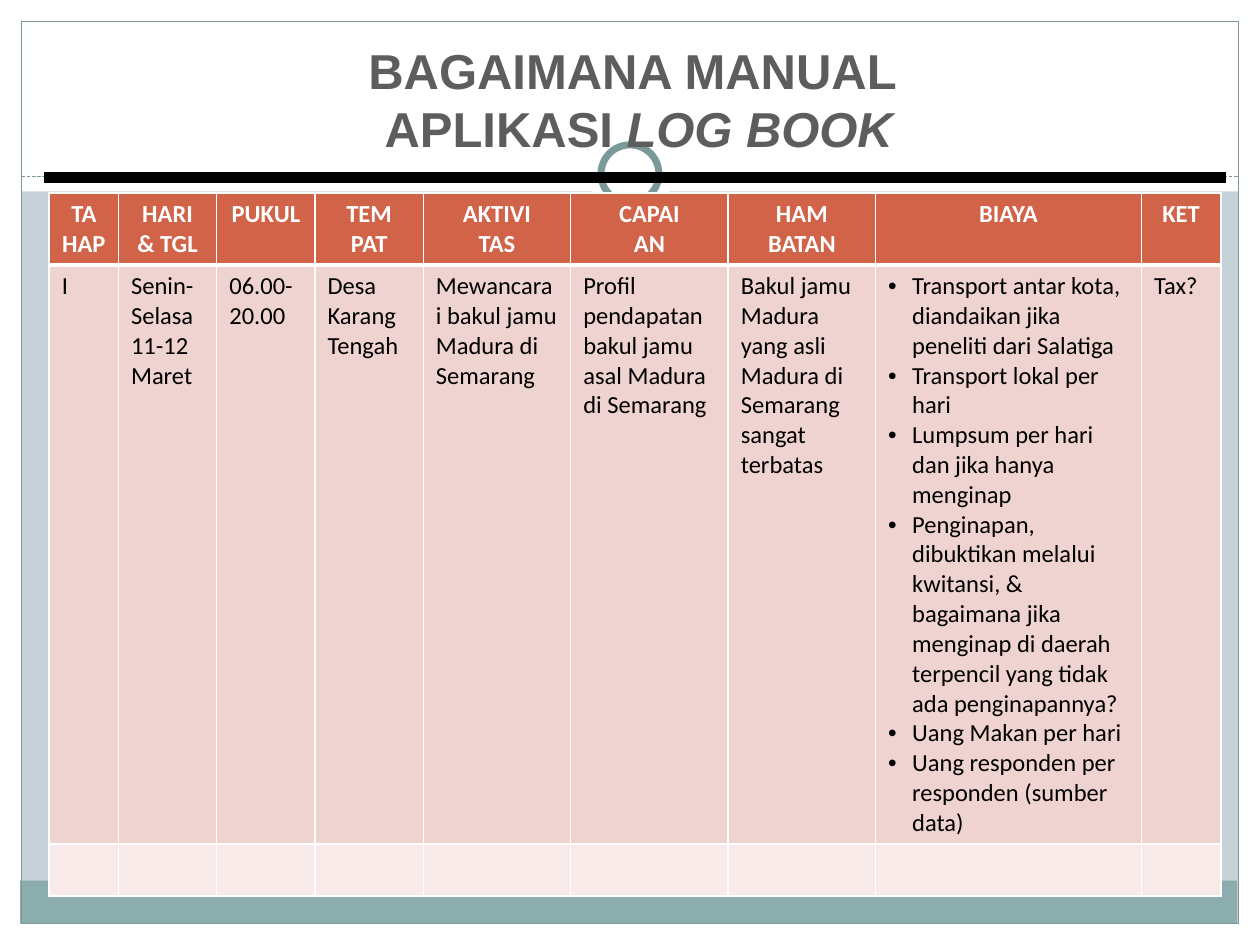
from dataclasses import dataclass

from lxml.etree import SubElement
from pptx import Presentation
from pptx.dml.color import RGBColor
from pptx.enum.dml import MSO_LINE
from pptx.enum.shapes import MSO_CONNECTOR, MSO_SHAPE
from pptx.enum.text import MSO_ANCHOR, MSO_AUTO_SIZE, PP_ALIGN
from pptx.oxml.ns import qn
from pptx.util import Inches, Pt


@dataclass(frozen=True)
class Theme:
    backdrop: str = "C5D1D7"
    white: str = "FFFFFF"
    black: str = "000000"
    footer: str = "8CADAE"
    trim: str = "7C999A"
    title: str = "5D5D5D"
    header: str = "D16349"
    body: str = "EED3D0"
    spare: str = "F7EAE9"
    title_font: str = "Arial"
    table_font: str = "Calibri"
    title_size: int = 28
    table_size: int = 14


THEME = Theme()

TITLE = [
    [("BAGAIMANA MANUAL ", False)],
    [("APLIKASI ", False), ("LOG BOOK", True)],
]
COLUMN_WIDTHS = [0.55, 0.78, 0.78, 0.86, 1.17, 1.25, 1.17, 2.11, 0.63]
ROW_HEIGHTS = [0.57, 4.53, 0.41]
HEADERS = [
    ["TA HAP"], ["HARI & TGL"], ["PUKUL"], ["TEM", "PAT"], ["AKTIVI", "TAS"],
    ["CAPAI", "AN"], ["HAM", "BATAN"], ["BIAYA"], ["KET"],
]
COSTS = [
    "Transport antar kota, diandaikan jika peneliti dari Salatiga",
    "Transport lokal per hari",
    "Lumpsum per hari dan jika hanya menginap",
    "Penginapan, dibuktikan melalui kwitansi, & bagaimana jika menginap "
    "di daerah terpencil yang tidak ada penginapannya?",
    "Uang Makan per hari",
    "Uang responden per responden (sumber data)",
]
ENTRY = [
    ["I"],
    ["Senin-Selasa", "11-12 Maret"],
    ["06.00-20.00"],
    ["Desa Karang Tengah"],
    ["Mewancarai bakul jamu Madura di Semarang"],
    ["Profil pendapatan bakul jamu asal Madura di Semarang"],
    ["Bakul jamu Madura yang asli Madura di Semarang sangat terbatas"],
    COSTS,
    ["Tax?"],
]


def rgb(code):
    return RGBColor.from_string(code)


def add_panel(slide, kind, box, fill=None, line=None, weight=0.75):
    panel = slide.shapes.add_shape(kind, *map(Inches, box))
    panel.shadow.inherit = False
    if fill:
        panel.fill.solid()
        panel.fill.fore_color.rgb = rgb(fill)
    else:
        panel.fill.background()
    if line:
        panel.line.color.rgb = rgb(line)
        panel.line.width = Pt(weight)
    else:
        panel.line.fill.background()


def add_rule(slide, left, right, y, color, weight, dash=None):
    rule = slide.shapes.add_connector(
        MSO_CONNECTOR.STRAIGHT, Inches(left), Inches(y), Inches(right), Inches(y))
    rule.line.color.rgb = rgb(color)
    rule.line.width = Pt(weight)
    if dash:
        rule.line.dash_style = dash
    SubElement(rule.element.spPr, qn("a:effectLst"))


def add_run(paragraph, text, font, size, color, bold=False, italic=False):
    run = paragraph.add_run()
    run.text = text
    run.font.name = font
    run.font.size = Pt(size)
    run.font.color.rgb = rgb(color)
    run.font.bold = bold
    run.font.italic = italic


def add_frame(slide):
    margins = [(0, 7.33, 10, 0.17), (0, 0, 10, 1.52),
               (0, 0, 0.17, 7.5), (9.83, 0, 0.17, 7.5)]
    for margin in margins:
        add_panel(slide, MSO_SHAPE.RECTANGLE, margin, THEME.white)
    add_panel(slide, MSO_SHAPE.RECTANGLE, (0.16, 6.99, 9.66, 0.34), THEME.footer)
    add_panel(slide, MSO_SHAPE.RECTANGLE, (0.17, 0.17, 9.66, 7.16), line=THEME.trim)
    add_rule(slide, 0.17, 9.83, 1.4, THEME.trim, 0.75, MSO_LINE.SQUARE_DOT)
    add_panel(slide, MSO_SHAPE.OVAL, (4.67, 1.05, 0.67, 0.67), THEME.white)
    add_panel(slide, MSO_SHAPE.OVAL, (4.77, 1.15, 0.46, 0.46),
              THEME.white, THEME.trim, 4)


def fill_title(slide):
    title = slide.shapes.title
    title.left, title.top, title.width, title.height = map(
        Inches, (1.17, 0.16, 7.8, 1.25))
    title.element.getparent().append(title.element)
    frame = title.text_frame
    frame.word_wrap = True
    frame.auto_size = MSO_AUTO_SIZE.NONE
    frame.vertical_anchor = MSO_ANCHOR.MIDDLE
    for index, pieces in enumerate(TITLE):
        paragraph = frame.add_paragraph() if index else frame.paragraphs[0]
        paragraph.alignment = PP_ALIGN.CENTER
        for text, italic in pieces:
            add_run(paragraph, text, THEME.title_font, THEME.title_size,
                    THEME.title, True, italic)


def set_bullet(paragraph):
    properties = paragraph._p.get_or_add_pPr()
    properties.set("marL", str(Inches(0.19)))
    properties.set("indent", str(-Inches(0.19)))
    SubElement(properties, qn("a:buFont"), typeface="Arial")
    SubElement(properties, qn("a:buChar"), char="•")


def set_borders(cell, top, bottom):
    properties = cell._tc.get_or_add_tcPr()
    weights = {"lnL": 1, "lnR": 1, "lnT": top, "lnB": bottom}
    for position, (side, weight) in enumerate(weights.items()):
        border = SubElement(properties, qn(f"a:{side}"), w=str(Pt(weight)))
        fill = SubElement(border, qn("a:solidFill"))
        SubElement(fill, qn("a:srgbClr"), val=THEME.white)
        properties.insert(position, border)


def fill_cell(cell, lines, color, is_header):
    cell.fill.solid()
    cell.fill.fore_color.rgb = rgb(color)
    for index, text in enumerate(lines):
        frame = cell.text_frame
        paragraph = frame.add_paragraph() if index else frame.paragraphs[0]
        paragraph.alignment = PP_ALIGN.CENTER if is_header else PP_ALIGN.LEFT
        if lines is COSTS:
            set_bullet(paragraph)
        add_run(paragraph, text, THEME.table_font, THEME.table_size,
                THEME.white if is_header else THEME.black, is_header)


def add_log_table(slide):
    rows = [(HEADERS, THEME.header, 1, 3), (ENTRY, THEME.body, 3, 1),
            ([[]] * len(HEADERS), THEME.spare, 1, 1)]
    log = slide.shapes.add_table(
        len(rows), len(HEADERS), Inches(0.39), Inches(1.53),
        Inches(sum(COLUMN_WIDTHS)), Inches(sum(ROW_HEIGHTS))).table
    log.horz_banding = False
    for column, width in zip(log.columns, COLUMN_WIDTHS):
        column.width = Inches(width)
    for row, height, (contents, color, top, bottom) in zip(log.rows, ROW_HEIGHTS, rows):
        row.height = Inches(height)
        for cell, lines in zip(row.cells, contents):
            fill_cell(cell, lines, color, contents is HEADERS)
            set_borders(cell, top, bottom)


def main():
    deck = Presentation()
    deck.slide_width, deck.slide_height = Inches(10), Inches(7.5)
    slide = deck.slides.add_slide(deck.slide_layouts[5])
    slide.background.fill.solid()
    slide.background.fill.fore_color.rgb = rgb(THEME.backdrop)
    add_frame(slide)
    fill_title(slide)
    add_rule(slide, 0.35, 9.73, 1.41, THEME.black, 6)
    add_log_table(slide)
    deck.save("out.pptx")


if __name__ == "__main__":
    main()
